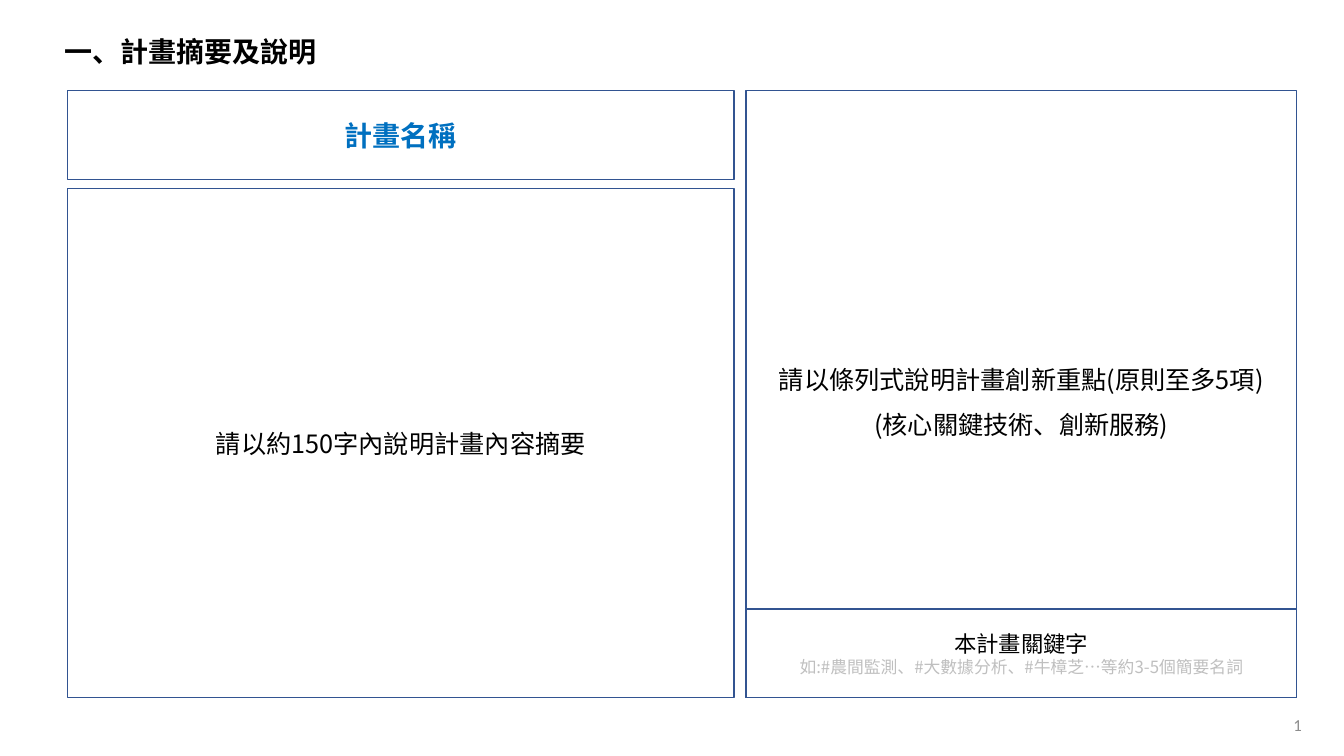
from lxml.etree import SubElement
from pptx import Presentation
from pptx.dml.color import RGBColor
from pptx.enum.shapes import MSO_SHAPE
from pptx.enum.text import MSO_ANCHOR, PP_ALIGN
from pptx.oxml.ns import qn
from pptx.util import Inches, Pt

CJK_FONT = "Noto Sans CJK SC"
BORDER = "325491"
BLACK = "000000"


def color(value):
    return RGBColor.from_string(value)


def write_lines(shape, lines, alignment=PP_ALIGN.CENTER, spacing=None, font=CJK_FONT):
    text_frame = shape.text_frame
    text_frame.text = "\n".join(text for text, *_ in lines)
    for paragraph, (_, size, hex_color, bold) in zip(text_frame.paragraphs, lines):
        paragraph.alignment = alignment
        if spacing:
            paragraph.line_spacing = spacing
        for run in paragraph.runs:
            run.font.size = Pt(size)
            run.font.bold = bold
            run.font.color.rgb = color(hex_color)
            run.font.name = font
            SubElement(run.font._element, qn("a:ea"), typeface=font)


def add_panel(slide, box, lines, spacing=None):
    shape = slide.shapes.add_shape(MSO_SHAPE.RECTANGLE, *map(Inches, box))
    shape.shadow.inherit = False
    shape.fill.background()
    shape.line.color.rgb = color(BORDER)
    shape.line.width = Pt(1)
    shape.text_frame.word_wrap = True
    shape.text_frame.vertical_anchor = MSO_ANCHOR.MIDDLE
    write_lines(shape, lines, spacing=spacing)


def add_heading(slide, box):
    heading = slide.shapes.add_textbox(*map(Inches, box))
    heading.text_frame.word_wrap = False
    write_lines(heading, [("一、計畫摘要及說明", 20, BLACK, True)], PP_ALIGN.LEFT)


def add_summary_column(slide, left, top, width, height, name_height=0.88, gap=0.09):
    summary_offset = name_height + gap
    add_panel(slide, (left, top + summary_offset, width, height - summary_offset),
              [("請以約150字內說明計畫內容摘要", 18, BLACK, False)])
    add_panel(slide, (left, top, width, name_height),
              [("計畫名稱", 20, "0070C0", True)])


def add_innovation_column(slide, left, top, width, height, keyword_height=0.88):
    add_panel(slide, (left, top, width, height),
              [("請以條列式說明計畫創新重點(原則至多5項)", 18, BLACK, False),
               ("(核心關鍵技術、創新服務)", 18, BLACK, False)], spacing=1.5)
    add_panel(slide, (left, top + height - keyword_height, width, keyword_height),
              [("本計畫關鍵字", 16, BLACK, False),
               ("如:#農間監測、#大數據分析、#牛樟芝…等約3-5個簡要名詞", 12, "BFBFBF", False)])


def add_page_number(slide, box):
    number = slide.shapes.add_textbox(*map(Inches, box))
    number.text_frame.word_wrap = True
    number.text_frame.vertical_anchor = MSO_ANCHOR.MIDDLE
    write_lines(number, [("1", 12, "8C8C8C", False)], font="Calibri")


def main():
    presentation = Presentation()
    presentation.slide_width = Inches(13.33)
    presentation.slide_height = Inches(7.5)
    slide = presentation.slides.add_slide(presentation.slide_layouts[6])
    add_heading(slide, (0.54, 0.29, 2.73, 0.44))
    add_summary_column(slide, 0.67, 0.9, 6.61, 6.02)
    add_innovation_column(slide, 7.4, 0.9, 5.46, 6.02)
    add_page_number(slide, (12.42, 6.99, 0.9, 0.4))
    presentation.save("out.pptx")


if __name__ == "__main__":
    main()
